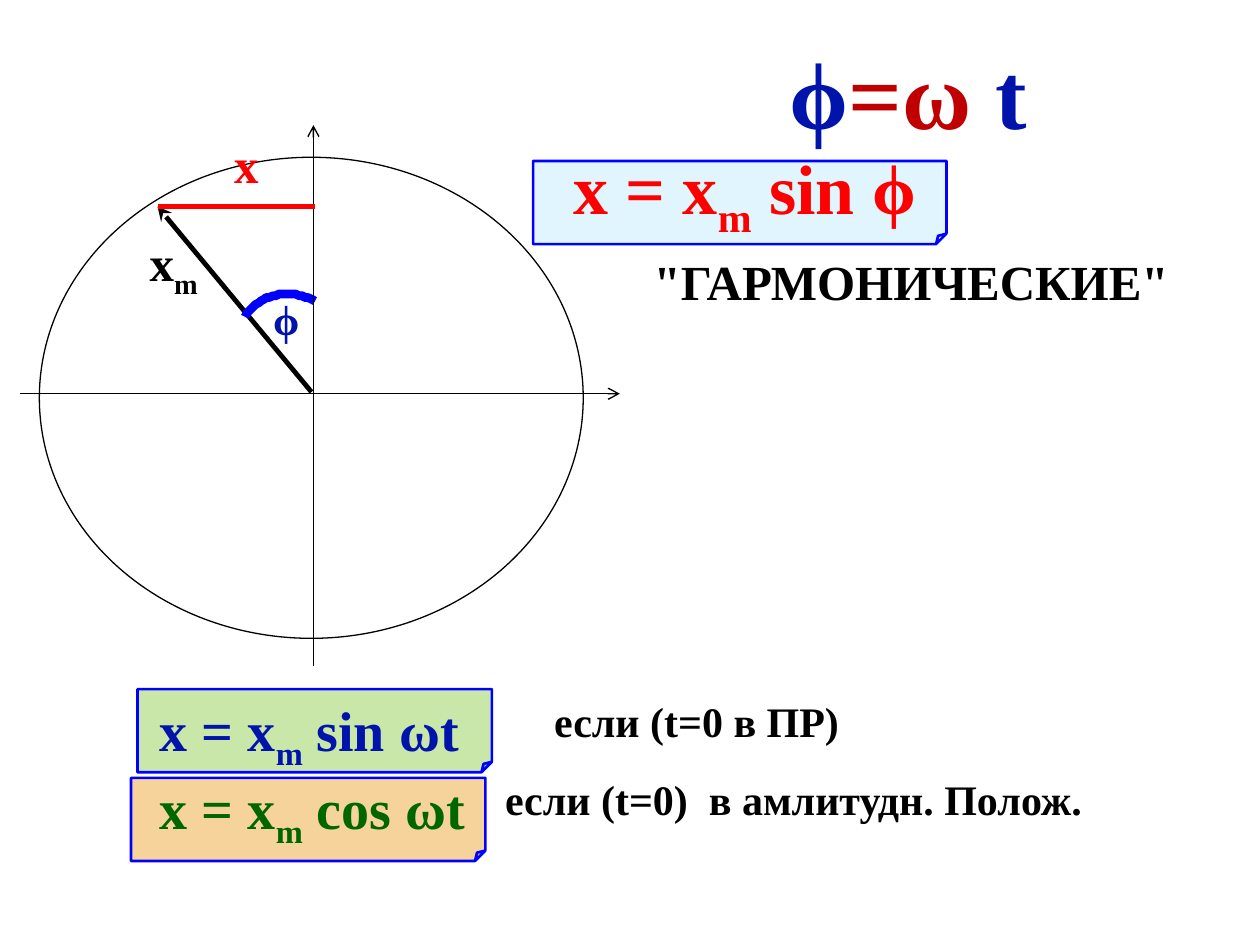
from dataclasses import dataclass

from lxml.etree import SubElement
from pptx import Presentation
from pptx.dml.color import RGBColor
from pptx.enum.shapes import MSO_CONNECTOR as Connector, MSO_SHAPE as Preset
from pptx.enum.text import MSO_ANCHOR as Anchor, MSO_AUTO_SIZE as AutoSize, PP_ALIGN as Align
from pptx.oxml.ns import qn
from pptx.util import Pt

FONT = "Times New Roman"
BLACK, BLUE, RED = "000000", "0000FF", "FF0000"
NAVY, GREEN, CRIMSON = "0014AC", "006600", "C00000"


@dataclass
class Span:
    text: str
    color: str = BLACK
    subscript: bool = False


@dataclass
class Label:
    box: tuple[float, float, float, float]
    size: float
    spans: list[Span]


@dataclass
class Card:
    box: tuple[float, float, float, float]
    fill: str
    opacity: int


@dataclass
class Line:
    start: tuple[float, float]
    end: tuple[float, float]
    color: str
    width: float
    arrow: str = ""


def color(value: str) -> RGBColor:
    return RGBColor.from_string(value)


def points(values) -> list[Pt]:
    return [Pt(value) for value in values]


def outline(shape, line_color: str, width: float) -> None:
    shape.shadow.inherit = False
    shape.line.color.rgb = color(line_color)
    shape.line.width = Pt(width)


def write(shape, size: float, spans: list[Span]) -> None:
    frame = shape.text_frame
    layout = {"word_wrap": True, "auto_size": AutoSize.NONE, "vertical_anchor": Anchor.TOP}
    for name, value in layout.items():
        setattr(frame, name, value)
    para = frame.paragraphs[0]
    para.alignment = Align.LEFT
    for span in spans:
        run = para.add_run()
        run.text = span.text
        for name, value in {"name": FONT, "size": Pt(size), "bold": True}.items():
            setattr(run.font, name, value)
        run.font.color.rgb = color(span.color)
        if span.subscript:
            run._r.get_or_add_rPr().set("baseline", "-25000")


def add_label(page, label: Label) -> None:
    write(page.shapes.add_textbox(*points(label.box)), label.size, label.spans)


def add_card(page, card: Card) -> None:
    shape = page.shapes.add_shape(Preset.FOLDED_CORNER, *points(card.box))
    properties = shape._element.spPr
    fold = next(properties.iter(qn("a:avLst")))
    SubElement(fold, qn("a:gd"), name="adj", fmla="val 12500")
    shape.fill.solid()
    shape.fill.fore_color.rgb = color(card.fill)
    tone = properties.find(qn("a:solidFill"))[0]
    SubElement(tone, qn("a:alpha"), val=str(card.opacity * 1000))
    outline(shape, BLUE, 1.5)


def add_line(page, line: Line) -> None:
    connector = page.shapes.add_connector(Connector.STRAIGHT, *points(line.start + line.end))
    connector.line.color.rgb = color(line.color)
    connector.line.width = Pt(line.width)
    if line.arrow:
        SubElement(connector.line._get_or_add_ln(), qn("a:tailEnd"), type=line.arrow)
    SubElement(connector._element.spPr, qn("a:effectLst"))


def add_curve(page, controls, line_color: str, width: float, steps: int = 24) -> None:
    """Draw a cubic Bezier curve as a fine open outline."""
    def at(t: float) -> tuple[float, float]:
        weights = ((1 - t) ** 3, 3 * t * (1 - t) ** 2, 3 * t * t * (1 - t), t ** 3)
        return tuple(sum(w * p[axis] for w, p in zip(weights, controls)) for axis in (0, 1))

    curve = [at(step / steps) for step in range(steps + 1)]
    builder = page.shapes.build_freeform(*curve[0], scale=float(Pt(1)))
    builder.add_line_segments(curve[1:], close=False)
    shape = builder.convert_to_shape()
    shape.fill.background()
    outline(shape, line_color, width)


def equation(function: str, tone: str) -> list[Span]:
    return [Span("x = x", tone), Span("m", tone, True), Span(f" {function}", tone)]


CARDS = [
    Card((304.6, 92, 236.2, 47.5), "00B0F0", 12),
    Card((74.9, 444.5, 202.5, 47.5), "F0A22E", 47),
    Card((78.6, 393.8, 202.5, 47.5), "92D050", 49),
]

# Rotating vector and its projection
TIP = (90, 118)
VECTOR = Line((178, 224), TIP, BLACK, 2.75, "stealth")
AXES_AND_PROJECTION = [
    Line((11.5, 225), (354.2, 225), BLACK, 0.79, "arrow"),
    Line((179.1, 380.7), (179.1, 71.5), BLACK, 0.79, "arrow"),
    Line(TIP, (180, 118), RED, 2.75),
]
ANGLE_ARC = [(180, 172.1), (165.6, 164.2), (147.6, 167.8), (140.4, 180.7)]

ROWS = (393.8, 438.5)
LABELS = [
    Label((149, 164.2, 39.6, 36), 24, [Span("ϕ", NAVY)]),
    Label((78.5, 129.6, 45.4, 41), 28, [Span("x"), Span("m", subscript=True)]),
    Label((126.7, 73.4, 50.4, 41), 28, [Span("x", RED)]),
    Label((320.4, 79.2, 242, 55.4), 40, equation("sin ϕ", RED)),
    Label((84.2, ROWS[0], 200, 46), 32, equation("sin ωt", NAVY)),
    Label((84.2, ROWS[1], 200, 46), 32, equation("cos ωt", GREEN)),
    Label((366.5, 140.4, 326.2, 41), 28, [Span('"ГАРМОНИЧЕСКИЕ"')]),
    Label((309.6, ROWS[0], 225.4, 36), 24, [Span("если (t=0 в ПР)")]),
    Label((281.5, ROWS[1], 354.2, 65.5), 24, [Span("если (t=0)  в амлитудн. Полож.")]),
]
TITLE = Label((444.2, 16.6, 157.7, 72.7), 54,
              [Span("ϕ", NAVY), Span("=ω", CRIMSON), Span(" t", NAVY)])


def main() -> None:
    deck = Presentation()
    deck.slide_width, deck.slide_height = Pt(720), Pt(540)
    page = deck.slides.add_slide(deck.slide_layouts[5])

    # Title formula
    title = page.shapes.title
    for name, value in zip(("left", "top", "width", "height"), points(TITLE.box)):
        setattr(title, name, value)
    write(title, TITLE.size, TITLE.spans)

    # Formula cards
    for card in CARDS:
        add_card(page, card)

    # Circle diagram
    circle = page.shapes.add_shape(Preset.OVAL, *points((22.5, 89.9, 310.8, 274.9)))
    circle.fill.background()
    outline(circle, BLACK, 0.75)
    add_line(page, VECTOR)
    add_curve(page, ANGLE_ARC, BLUE, 5)
    for line in AXES_AND_PROJECTION:
        add_line(page, line)

    # Labels and equations
    for label in LABELS:
        add_label(page, label)

    deck.save("out.pptx")


if __name__ == "__main__":
    main()
